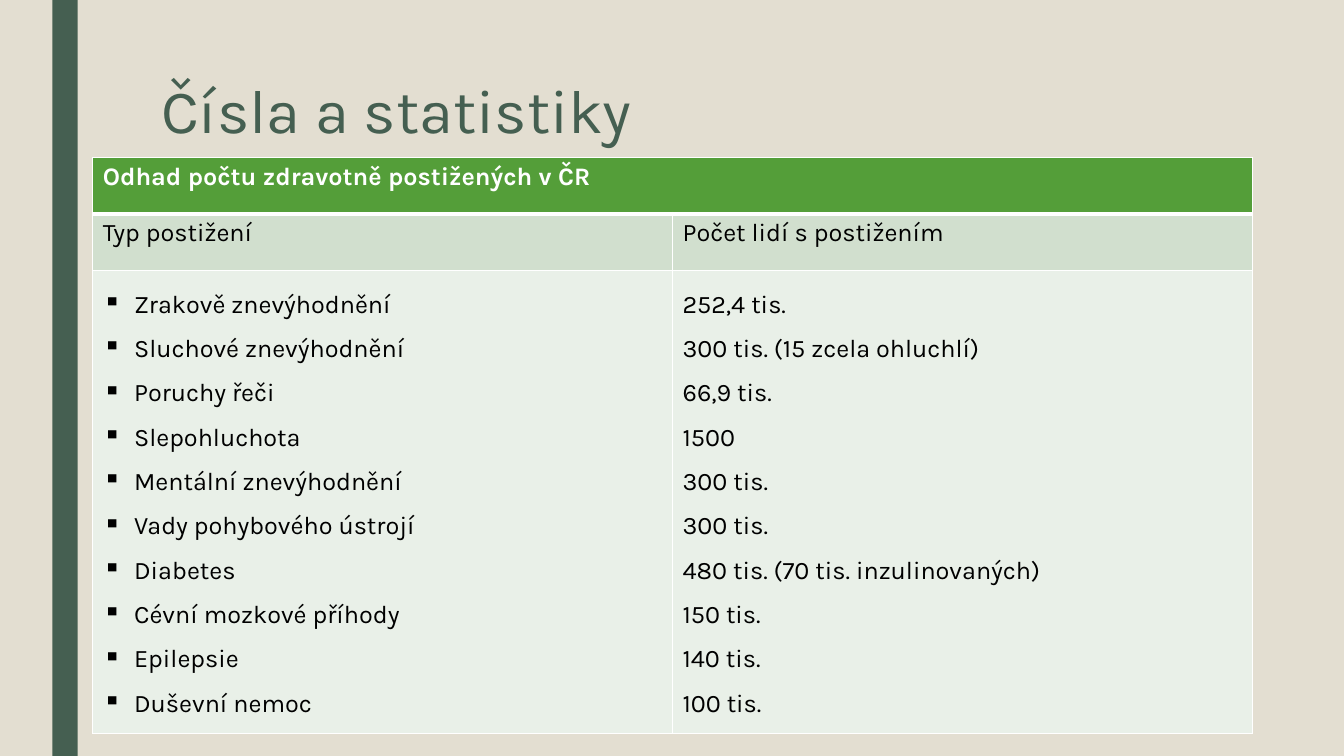
from lxml import etree
from pptx import Presentation
from pptx.dml.color import RGBColor
from pptx.enum.shapes import MSO_SHAPE
from pptx.enum.text import MSO_ANCHOR, PP_ALIGN
from pptx.oxml.ns import qn
from pptx.util import Pt

PX = 9144
RECT = MSO_SHAPE.RECTANGLE
TOP = MSO_ANCHOR.TOP
LEFT = PP_ALIGN.LEFT
SAND = RGBColor(0xE3, 0xDE, 0xD1)
PINE = RGBColor(0x45, 0x5F, 0x51)
GREEN = RGBColor(0x54, 0x9E, 0x39)
SAGE = RGBColor(0xD1, 0xDF, 0xCE)
MIST = RGBColor(0xE9, 0xF0, 0xE8)
WHITE = RGBColor(0xFF, 0xFF, 0xFF)
BLACK = RGBColor(0x00, 0x00, 0x00)

ESTIMATES = [
    ("Zrakově znevýhodnění", "252,4 tis."),
    ("Sluchové znevýhodnění", "300 tis. (15 zcela ohluchlí)"),
    ("Poruchy řeči", "66,9 tis."),
    ("Slepohluchota", "1500"),
    ("Mentální znevýhodnění", "300 tis."),
    ("Vady pohybového ústrojí", "300 tis."),
    ("Diabetes", "480 tis. (70 tis. inzulinovaných)"),
    ("Cévní mozkové příhody", "150 tis."),
    ("Epilepsie", "140 tis."),
    ("Duševní nemoc", "100 tis."),
]
types, counts = zip(*ESTIMATES)


def write(tf, lines, color, size=18, bold=False, spacing=1.0, bullet=None):
    for i, line in enumerate(lines):
        p = tf.paragraphs[0] if i == 0 else tf.add_paragraph()
        if bullet:
            pPr = p._p.get_or_add_pPr()
            pPr.set("marL", str(31 * PX))
            pPr.set("indent", str(-31 * PX))
            etree.SubElement(pPr, qn("a:buChar")).set("char", bullet)
        p.alignment = LEFT
        p.line_spacing = spacing
        r = p.add_run()
        r.text = line
        for name, value in {"name": "Karla", "size": Pt(size), "bold": bold}.items():
            setattr(r.font, name, value)
        r.font.color.rgb = color


def style_cell(cell, fill, bottom):
    tcPr = cell._tc.get_or_add_tcPr()
    for side, width in {"L": 1, "R": 1, "T": 1, "B": bottom}.items():
        ln = etree.SubElement(tcPr, qn(f"a:ln{side}"), w=str(Pt(width)))
        line = etree.SubElement(ln, qn("a:solidFill"))
        etree.SubElement(line, qn("a:srgbClr"), val=str(WHITE))
    cell.fill.solid()
    cell.fill.fore_color.rgb = fill


prs = Presentation()
prs.slide_width = 1333 * PX
prs.slide_height = 750 * PX
s = prs.slides.add_slide(prs.slide_layouts[6])
s.background.fill.solid()
s.background.fill.fore_color.rgb = SAND

bar = s.shapes.add_shape(RECT, 52 * PX, 0, 25 * PX, 750 * PX)
bar.shadow.inherit = False
bar.fill.solid()
bar.fill.fore_color.rgb = PINE
bar.line.fill.background()

title = s.shapes.add_textbox(150 * PX, 75 * PX, 1050 * PX, 162 * PX)
tf = title.text_frame
tf.word_wrap = True
tf.vertical_anchor = TOP
write(tf, ["Čísla a statistiky"], PINE, size=44, spacing=0.89)

table = s.shapes.add_table(3, 2, 92 * PX, 156 * PX, 1150 * PX, 540 * PX).table
for row, height in zip(table.rows, (56, 56, 428)):
    row.height = height * PX
for row, (fill, bottom) in enumerate([(GREEN, 3), (SAGE, 1), (MIST, 1)]):
    for col in range(2):
        style_cell(table.cell(row, col), fill, bottom)
table.cell(0, 0).merge(table.cell(0, 1))

write(table.cell(0, 0).text_frame, ["Odhad počtu zdravotně postižených v ČR"], WHITE, bold=True)
columns = [("Typ postižení", types, "▪"), ("Počet lidí s postižením", counts, None)]
for col, (heading, lines, bullet) in enumerate(columns):
    write(table.cell(1, col).text_frame, [heading], BLACK)
    write(table.cell(2, col).text_frame, lines, BLACK, spacing=1.5, bullet=bullet)

prs.save("out.pptx")
